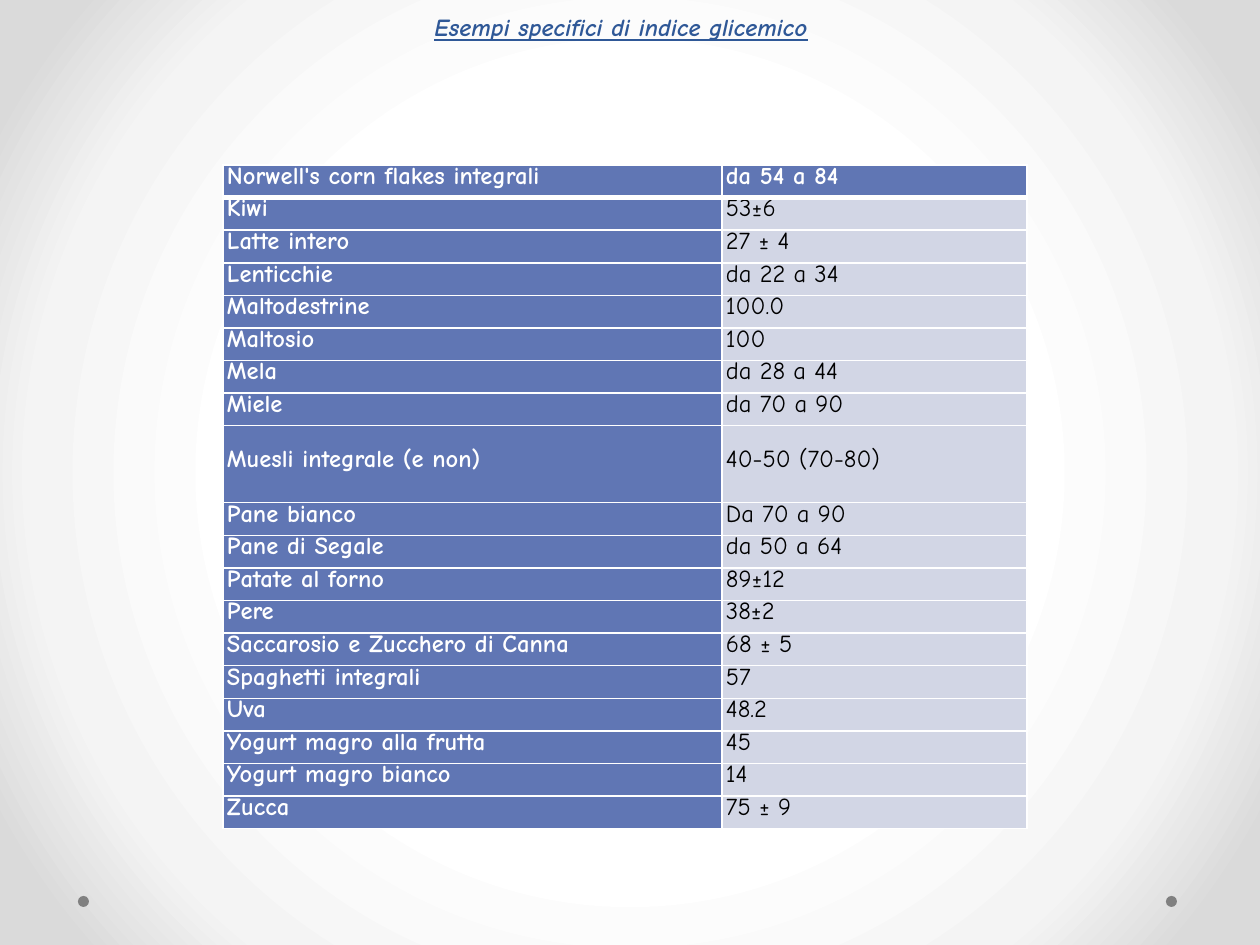
import pptx
import pptx.util
import pptx.dml.color
import pptx.enum.shapes
import pptx.enum.text
import pptx.oxml
import pptx.oxml.ns

TITLE = "Esempi specifici di indice glicemico"
FOODS = [
    ("Norwell's corn flakes integrali", "da 54 a 84"),
    ("Kiwi", "53±6"),
    ("Latte intero", "27 ± 4"),
    ("Lenticchie", "da 22 a 34"),
    ("Maltodestrine", "100.0"),
    ("Maltosio", "100"),
    ("Mela", "da 28 a 44"),
    ("Miele", "da 70 a 90"),
    ("Muesli integrale (e non)", "40-50 (70-80)"),
    ("Pane bianco", "Da 70 a 90"),
    ("Pane di Segale", "da 50 a 64"),
    ("Patate al forno", "89±12"),
    ("Pere", "38±2"),
    ("Saccarosio e Zucchero di Canna", "68 ± 5"),
    ("Spaghetti integrali", "57"),
    ("Uva", "48.2"),
    ("Yogurt magro alla frutta", "45"),
    ("Yogurt magro bianco", "14"),
    ("Zucca", "75 ± 9"),
]
FONT = "Comic Neue"
BLUE, PALE, WHITE, BLACK = "6076B4", "D2D6E5", "FFFFFF", "000000"
STOPS = [(50, WHITE), (76, "F4F4F4"), (92, "DADADA")]
LEFT, TOP, HEIGHT = 223, 165, 664
COLS = [499, 305]
TALL_ROW, TALL_HEIGHT = 8, 77
DOTS = [78, 1166]


def px(n):
    return pptx.util.Emu(round(n * 914400 / 126))


def rgb(color):
    return pptx.dml.color.RGBColor.from_string(color)


def add_run(p, text, color, bold):
    r = p.add_run()
    r.text = text
    r.font.name = FONT
    r.font.size = pptx.util.Pt(14)
    r.font.bold = bold
    r.font.color.rgb = rgb(color)
    return r


def set_background(s):
    ns = pptx.oxml.ns.nsdecls("a", "p")
    stops = "".join(
        f'<a:gs pos="{pos * 1000}"><a:srgbClr val="{color}"/></a:gs>'
        for pos, color in STOPS)
    bg = pptx.oxml.parse_xml(
        f'<p:bg {ns}><p:bgPr><a:gradFill rotWithShape="1"><a:gsLst>{stops}</a:gsLst>'
        '<a:path path="circle"><a:fillToRect l="50000" t="50000" r="50000" b="50000"/>'
        '</a:path></a:gradFill><a:effectLst/></p:bgPr></p:bg>')
    s._element.cSld.insert(0, bg)


def set_borders(cell, widths):
    ns = pptx.oxml.ns.nsdecls("a")
    tcPr = cell._tc.get_or_add_tcPr()
    for i, (side, width) in enumerate(zip("LRTB", widths)):
        tcPr.insert(i, pptx.oxml.parse_xml(
            f'<a:ln{side} {ns} w="{pptx.util.Pt(width)}"><a:solidFill>'
            f'<a:srgbClr val="{WHITE}"/></a:solidFill></a:ln{side}>'))


def add_title(s):
    title = s.shapes.title
    title.left, title.top, title.width, title.height = px(54), px(45), px(1134), px(59)
    tf = title.text_frame
    tf.auto_size = pptx.enum.text.MSO_AUTO_SIZE.NONE
    tf.vertical_anchor = pptx.enum.text.MSO_ANCHOR.BOTTOM
    p = tf.paragraphs[0]
    p.alignment = pptx.enum.text.PP_ALIGN.CENTER
    p.line_spacing = pptx.util.Pt(32)
    r = add_run(p, TITLE, "2F5897", True)
    r.font.italic = True
    r.font.underline = True
    p.add_line_break()


def add_dots(s):
    for x in DOTS:
        sp = s.shapes.add_shape(pptx.enum.shapes.MSO_SHAPE.OVAL,
                                px(x), px(896), px(11), px(11))
        sp.shadow.inherit = False
        sp.fill.solid()
        sp.fill.fore_color.rgb = rgb("808080")
        sp.line.fill.background()


def add_food_table(s):
    table = s.shapes.add_table(len(FOODS), len(COLS), px(LEFT), px(TOP),
                               px(sum(COLS)), px(HEIGHT)).table
    for column, width in zip(table.columns, COLS):
        column.width = px(width)
    row_height = (HEIGHT - TALL_HEIGHT) / (len(FOODS) - 1)
    for i, food in enumerate(FOODS):
        table.rows[i].height = px(TALL_HEIGHT if i == TALL_ROW else row_height)
        for j, text in enumerate(food):
            strong = i == 0 or j == 0
            cell = table.cell(i, j)
            cell.margin_left = cell.margin_right = px(4)
            cell.margin_top = cell.margin_bottom = px(4)
            cell.vertical_anchor = pptx.enum.text.MSO_ANCHOR.MIDDLE
            cell.fill.solid()
            cell.fill.fore_color.rgb = rgb(BLUE if strong else PALE)
            set_borders(cell, (1, 1, 3 if i == 1 else 1, 3 if i == 0 else 1))
            p = cell.text_frame.paragraphs[0]
            p.line_spacing = pptx.util.Pt(10.5)
            add_run(p, text, WHITE if strong else BLACK, strong)


def main():
    prs = pptx.Presentation()
    prs.slide_width, prs.slide_height = px(1260), px(945)
    s = prs.slides.add_slide(prs.slide_layouts[5])
    set_background(s)
    add_dots(s)
    add_title(s)
    add_food_table(s)
    prs.save("out.pptx")


if __name__ == "__main__":
    main()
